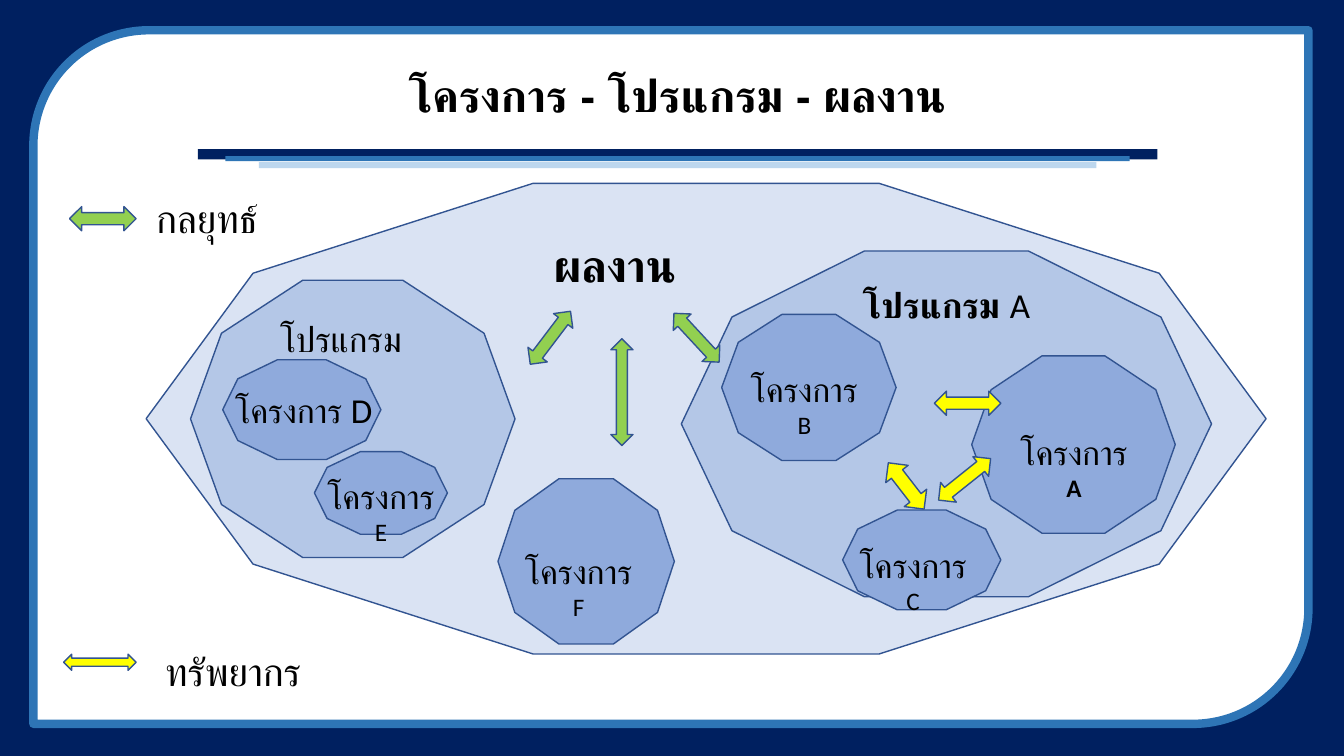
"""Build the project, programme and portfolio slide."""
from dataclasses import dataclass

from pptx import Presentation
from pptx.dml.color import RGBColor
from pptx.enum.shapes import MSO_SHAPE as SHAPE
from pptx.enum.text import MSO_ANCHOR as ANCHOR, MSO_AUTO_SIZE as AUTO, PP_ALIGN as ALIGN
from pptx.util import Pt


@dataclass(frozen=True)
class Theme:
    """Colours, fonts and type sizes of the slide."""
    navy: str = "002060"
    blue: str = "2E75B6"
    sky: str = "BDD7EE"
    white: str = "FFFFFF"
    black: str = "000000"
    outline: str = "325491"
    portfolio: str = "DAE3F3"
    program: str = "B4C7E7"
    project: str = "8FAADC"
    strategy: str = "92D050"
    resource: str = "FFFF00"
    head_font: str = "Arial"
    body_font: str = "Calibri"
    head: int = 32
    legend: int = 28
    program_size: int = 25
    project_size: int = 24
    letter: int = 18


T = Theme()
PROJECT = "โครงการ"
TITLE = "โครงการ - โปรแกรม - ผลงาน"


def project_runs(letter, size=T.letter, bold=False):
    """Return the runs of a project label."""
    return [(PROJECT, T.project_size, False), (f" {letter}", size, bold)]


RULE_CENTER = 484
RULES = [
    (685.4, 106.6, 7.2, T.navy),
    (645.8, 111.6, 3.6, T.blue),
    (598.3, 115.9, 4.3, T.sky),
]
BLOBS = [
    (T.portfolio, (104.4, 131, 800, 336.2),
     [("ผลงาน", T.head, True)], (331.2, 166.3, 216, 46)),
    (T.program, (486.7, 179.3, 378.7, 247),
     [("โปรแกรม ", T.program_size, True), ("A", T.program_size, False)],
     (603.4, 198.7, 145.4, 37.4)),
    (T.project, (694.1, 254.2, 145.4, 126.7),
     project_runs("A", bold=True), (718.6, 305.3, 97.2, 36)),
    (T.project, (515.5, 224.6, 124.6, 104.4),
     project_runs("B"), (526.3, 259.9, 96.5, 36)),
    (T.project, (601.9, 364.3, 113, 71.3),
     project_runs("C"), (605.5, 385.9, 93.6, 36)),
    (T.program, (136.1, 200.2, 231.8, 198),
     [("โปรแกรม", T.program_size, False)], (183.6, 223.2, 120.2, 37.4)),
    (T.project, (159.1, 257, 113, 71.3),
     project_runs("D", T.program_size), (160.6, 273.6, 113, 37.4)),
    (T.project, (224.6, 322.6, 95, 59),
     project_runs("E"), (224.6, 336.2, 95, 36)),
    (T.project, (355.7, 342, 126, 118),
     project_runs("F"), (365.8, 390.2, 95, 36)),
]
ARROWS = [
    (T.resource, (667.4, 279.4, 47.5, 17.3), 0),
    (T.resource, (626.4, 337, 41.8, 20.2), 52.3),
    (T.resource, (665.3, 333.4, 47.5, 18), 321.4),
    (T.resource, (45.4, 467.3, 51.8, 11.5), 0),
    (T.strategy, (473.8, 232.6, 47.5, 17.3), 47.2),
    (T.strategy, (49.7, 147.6, 47.5, 17.3), 0),
    (T.strategy, (369.4, 232.6, 47.5, 17.3), 307.2),
    (T.strategy, (406.1, 272.2, 76.3, 15.8), 270),
]
LEGEND = [
    ("ทรัพยากร", (110.9, 458.6, 153.4, 41)),
    ("กลยุทธ์", (104.4, 135.4, 102.2, 41)),
]


def add_shape(s, kind, box, fill, line=None, weight=1, rotation=0):
    """Add a filled shape with an optional outline."""
    sp = s.shapes.add_shape(kind, *map(Pt, box))
    sp.shadow.inherit = False
    sp.rotation = rotation
    sp.fill.solid()
    sp.fill.fore_color.rgb = RGBColor.from_string(fill)
    if line:
        sp.line.color.rgb = RGBColor.from_string(line)
        sp.line.width = Pt(weight)
    else:
        sp.line.fill.background()


def add_text(s, runs, box, font=T.body_font, align=ALIGN.CENTER,
             anchor=ANCHOR.TOP, fit=AUTO.SHAPE_TO_FIT_TEXT, spacing=1.0):
    """Add a one-paragraph text box from (text, size, bold) runs."""
    tf = s.shapes.add_textbox(*map(Pt, box)).text_frame
    tf.word_wrap = True
    tf.auto_size = fit
    tf.vertical_anchor = anchor
    p = tf.paragraphs[0]
    p.alignment = align
    p.line_spacing = spacing
    for text, size, bold in runs:
        r = p.add_run()
        r.text = text
        r.font.name = font
        r.font.size = Pt(size)
        r.font.bold = bold
        r.font.color.rgb = RGBColor.from_string(T.black)


def main():
    """Draw the slide and save it."""
    prs = Presentation()
    prs.slide_width, prs.slide_height = Pt(960), Pt(540)
    s = prs.slides.add_slide(prs.slide_layouts[6])

    add_shape(s, SHAPE.RECTANGLE, (0, 0, 960, 540), T.navy)
    add_shape(s, SHAPE.ROUND_2_DIAG_RECTANGLE, (23.8, 21.6, 910.8, 495.4),
              T.white, T.blue, 6, 180)
    for width, top, height, color in RULES:
        add_shape(s, SHAPE.RECTANGLE,
                  (RULE_CENTER - width / 2, top, width, height), color)
    add_text(s, [(TITLE, T.head, True)], (141.1, 35.3, 685.4, 69.8),
             font=T.head_font, anchor=ANCHOR.MIDDLE, fit=AUTO.NONE, spacing=0.9)

    for fill, box, runs, label_box in BLOBS:
        add_shape(s, SHAPE.DECAGON, box, fill, T.outline)
        add_text(s, runs, label_box)
    for fill, box, angle in ARROWS:
        add_shape(s, SHAPE.LEFT_RIGHT_ARROW, box, fill, T.outline, rotation=angle)
    for text, box in LEGEND:
        add_text(s, [(text, T.legend, False)], box, align=ALIGN.LEFT)

    prs.save("out.pptx")


if __name__ == "__main__":
    main()
